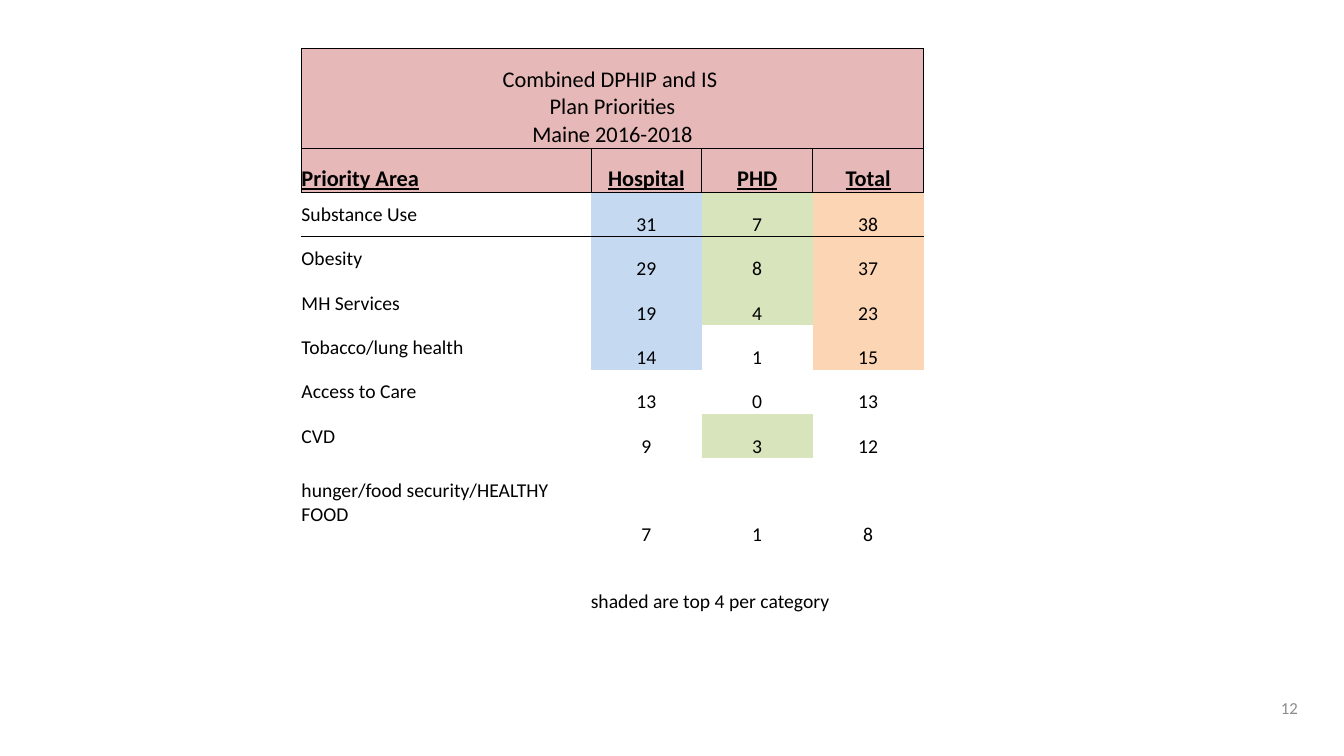
from dataclasses import dataclass

from lxml import etree
from pptx import Presentation
from pptx.dml.color import RGBColor
from pptx.enum.text import MSO_ANCHOR as Anchor, PP_ALIGN as Align
from pptx.oxml.ns import qn
from pptx.util import Inches, Pt

FONT = "Calibri"
BLACK = "000000"
HEADER_FILL = "E6B8B7"
TOP_COUNT = 4
NO_STYLE = "{2D5ABB26-0587-4C30-8999-92F81FD0307C}"
ALL_EDGES = ("lnL", "lnR", "lnT", "lnB")

TITLE = "Combined DPHIP and IS \vPlan Priorities\vMaine 2016-2018"
NOTE = "shaded are top 4 per category"
COLUMN_WIDTHS = (2.87, 1.1, 1.1, 1.1)
ROW_HEIGHTS = (0.99, *[0.44] * 7, 0.88, 0.33, 0.33)


@dataclass
class Priority:
    area: str
    hospital: int
    phd: int

    @property
    def counts(self) -> tuple[int, int, int]:
        return self.hospital, self.phd, self.hospital + self.phd


@dataclass
class Category:
    heading: str
    shade: str


PRIORITIES = [
    Priority("Substance Use", 31, 7),
    Priority("Obesity", 29, 8),
    Priority("MH Services", 19, 4),
    Priority("Tobacco/lung health", 14, 1),
    Priority("Access to Care", 13, 0),
    Priority("CVD", 9, 3),
    Priority("hunger/food security/HEALTHY FOOD", 7, 1),
]
CATEGORIES = [
    Category("Hospital", "C5D9F1"),
    Category("PHD", "D8E4BC"),
    Category("Total", "FCD5B4"),
]


def rgb(value: str) -> RGBColor:
    return RGBColor.from_string(value)


def style_font(paragraph, size: float, color: str = BLACK, heading: bool = False) -> None:
    font = paragraph.font
    font.name, font.size, font.color.rgb = FONT, Pt(size), rgb(color)
    font.bold = font.underline = heading


def write_cell(cell, text: str, size: float = 14, align=Align.CENTER,
               anchor=Anchor.BOTTOM, heading: bool = False) -> None:
    cell.text = text
    cell.vertical_anchor = anchor
    paragraph = cell.text_frame.paragraphs[0]
    paragraph.alignment = align
    style_font(paragraph, size, heading=heading)


def add_borders(cell, edges: tuple[str, ...]) -> None:
    """Draw thin black lines, placed before the fill as the schema asks."""
    properties = cell._tc.get_or_add_tcPr()
    for index, edge in enumerate(edges):
        line = etree.Element(qn(f"a:{edge}"), w=str(Pt(0.5)))
        solid = etree.SubElement(line, qn("a:solidFill"))
        etree.SubElement(solid, qn("a:srgbClr"), val=BLACK)
        properties.insert(index, line)


def shade_cell(cell, color: str) -> None:
    cell.fill.solid()
    cell.fill.fore_color.rgb = rgb(color)


def add_empty_table(slide):
    frame = slide.shapes.add_table(
        len(ROW_HEIGHTS), len(COLUMN_WIDTHS), Inches(2.99), Inches(0.48),
        Inches(sum(COLUMN_WIDTHS)), Inches(sum(ROW_HEIGHTS)))
    table = frame.table
    table.first_row = table.horz_banding = False
    table._tbl.tblPr.find(qn("a:tableStyleId")).text = NO_STYLE
    for column, width in zip(table.columns, COLUMN_WIDTHS):
        column.width = Inches(width)
    for row, height in zip(table.rows, ROW_HEIGHTS):
        row.height = Inches(height)
    for cell in table.iter_cells():
        cell.margin_left = cell.margin_right = cell.margin_top = cell.margin_bottom = 0
        cell.fill.background()
        style_font(cell.text_frame.paragraphs[0], 14)
    return table


def add_header(table) -> None:
    for row in range(2):
        for column in range(len(COLUMN_WIDTHS)):
            shade_cell(table.cell(row, column), HEADER_FILL)
            add_borders(table.cell(row, column), ALL_EDGES)
    table.cell(0, 0).merge(table.cell(0, 3))
    write_cell(table.cell(0, 0), TITLE, 16)
    write_cell(table.cell(1, 0), "Priority Area", 16, Align.LEFT, heading=True)
    for column, category in enumerate(CATEGORIES, 1):
        write_cell(table.cell(1, column), category.heading, 16, heading=True)


def add_priorities(table) -> None:
    """Fill in the counts and shade the highest ones of each category."""
    for row, priority in enumerate(PRIORITIES, 2):
        write_cell(table.cell(row, 0), priority.area, align=Align.LEFT, anchor=Anchor.MIDDLE)
        for column, count in enumerate(priority.counts, 1):
            write_cell(table.cell(row, column), str(count))
    for column, category in enumerate(CATEGORIES, 1):
        counts = [priority.counts[column - 1] for priority in PRIORITIES]
        threshold = sorted(counts, reverse=True)[TOP_COUNT - 1]
        for row, count in enumerate(counts, 2):
            if count >= threshold:
                shade_cell(table.cell(row, column), category.shade)
    for column in range(len(COLUMN_WIDTHS)):
        add_borders(table.cell(2, column), ("lnT",))


def add_note(table) -> None:
    last = len(ROW_HEIGHTS) - 1
    table.cell(last, 1).merge(table.cell(last, 3))
    write_cell(table.cell(last, 1), NOTE, align=Align.LEFT)


def add_page_number(slide, number: int) -> None:
    box = slide.shapes.add_textbox(Inches(12.55), Inches(6.82), Inches(0.42), Inches(0.4))
    frame = box.text_frame
    frame.word_wrap = True
    frame.vertical_anchor = Anchor.MIDDLE
    frame.text = str(number)
    frame.paragraphs[0].alignment = Align.RIGHT
    style_font(frame.paragraphs[0], 12, "8C8C8C")


def main() -> None:
    deck = Presentation()
    deck.slide_width, deck.slide_height = Inches(13.33), Inches(7.5)
    slide = deck.slides.add_slide(deck.slide_layouts[6])
    add_page_number(slide, 12)
    table = add_empty_table(slide)
    add_header(table)
    add_priorities(table)
    add_note(table)
    deck.save("out.pptx")


if __name__ == "__main__":
    main()
